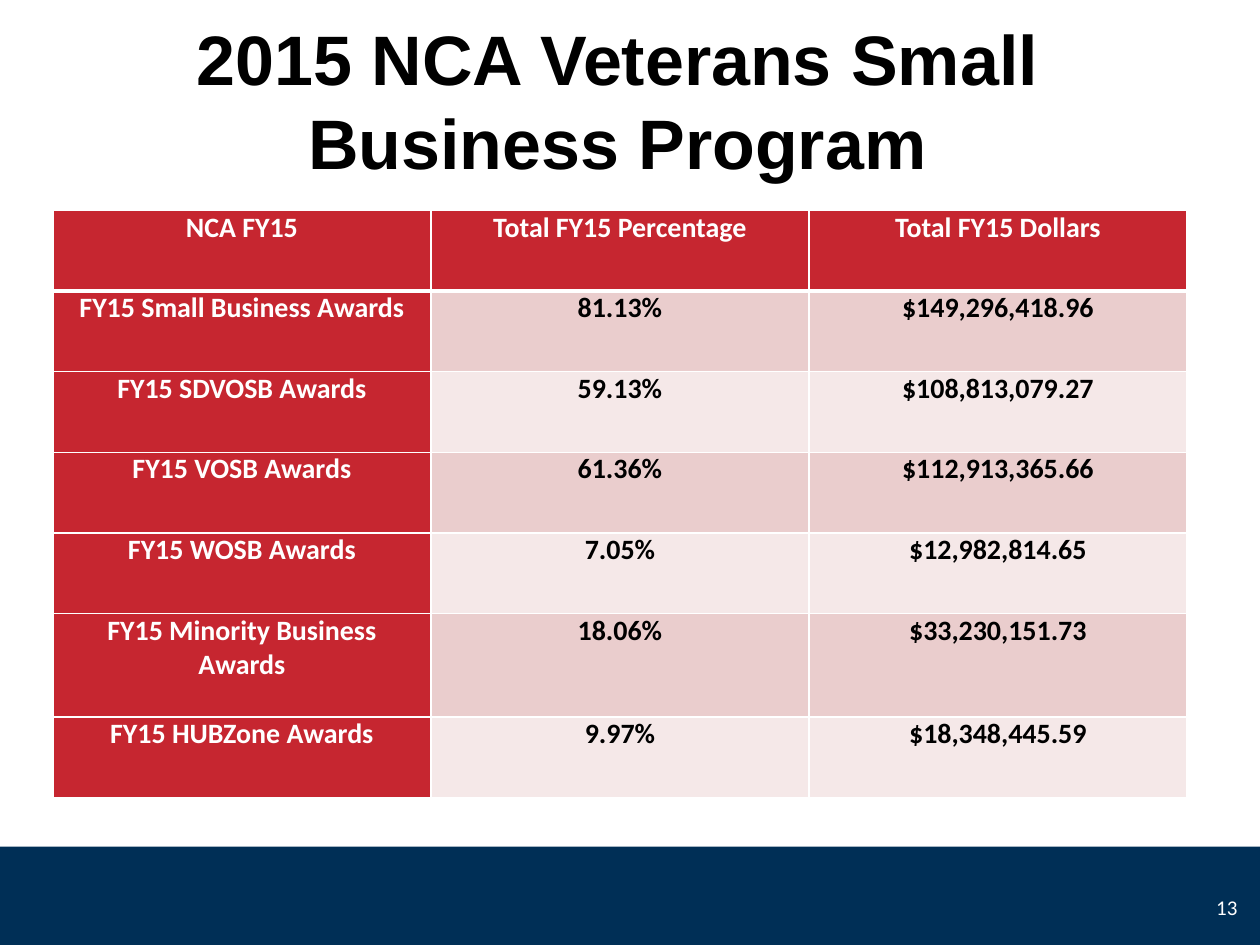
from lxml import etree
from pptx import Presentation
from pptx.dml.color import RGBColor
from pptx.enum.shapes import MSO_SHAPE
from pptx.enum.text import MSO_ANCHOR, PP_ALIGN
from pptx.oxml.ns import qn
from pptx.util import Inches, Pt

COLORS = {"navy": "002F56", "red": "C62630", "rose": "EACDCD",
          "blush": "F5E8E8", "white": "FFFFFF", "black": "000000"}
ROWS = [
    ("NCA FY15", "Total FY15 Percentage", "Total FY15 Dollars"),
    ("FY15 Small Business Awards", "81.13%", "$149,296,418.96"),
    ("FY15 SDVOSB Awards", "59.13%", "$108,813,079.27"),
    ("FY15 VOSB Awards", "61.36%", "$112,913,365.66"),
    ("FY15 WOSB Awards", "7.05%", "$12,982,814.65"),
    ("FY15 Minority Business Awards", "18.06%", "$33,230,151.73"),
    ("FY15 HUBZone Awards", "9.97%", "$18,348,445.59"),
]
ROW_H, TALL_ROW_H, TALL_ROW = 0.64, 0.82, 5
COL_W = 3


def add_text(tf, text, size, font, color, align, bold=False):
    p = tf.paragraphs[0]
    p.alignment = align
    r = p.add_run()
    r.text = text
    r.font.size = Pt(size)
    r.font.name = font
    r.font.bold = bold
    r.font.color.rgb = RGBColor.from_string(COLORS[color])


def add_border(cell, side, width):
    ln = etree.SubElement(cell._tc.get_or_add_tcPr(), qn(f"a:ln{side}"), w=str(Pt(width)))
    fill = etree.SubElement(ln, qn("a:solidFill"))
    etree.SubElement(fill, qn("a:srgbClr"), val=COLORS["white"])


prs = Presentation()
prs.slide_width, prs.slide_height = Inches(10), Inches(7.5)
s = prs.slides.add_slide(prs.slide_layouts[5])

band_top = Inches(6.72)
band = s.shapes.add_shape(MSO_SHAPE.RECTANGLE, 0, band_top,
                          prs.slide_width, prs.slide_height - band_top)
band.shadow.inherit = False
band.fill.solid()
band.fill.fore_color.rgb = RGBColor.from_string(COLORS["navy"])
band.line.fill.background()

title = s.shapes.title
title.left, title.top = Inches(0.33), Inches(0.17)
title.width, title.height = Inches(9.14), Inches(1.24)
title.text_frame.vertical_anchor = MSO_ANCHOR.MIDDLE
add_text(title.text_frame, "2015 NCA Veterans Small Business Program",
         40, "Arial", "black", PP_ALIGN.CENTER, True)

table = s.shapes.add_table(len(ROWS), len(ROWS[0]), Inches(0.42), Inches(1.67),
                           Inches(COL_W * len(ROWS[0])),
                           Inches(ROW_H * (len(ROWS) - 1) + TALL_ROW_H)).table
for col in table.columns:
    col.width = Inches(COL_W)

for i, row in enumerate(ROWS):
    table.rows[i].height = Inches(TALL_ROW_H if i == TALL_ROW else ROW_H)
    for j, text in enumerate(row):
        cell = table.cell(i, j)
        header = i == 0 or j == 0
        cell.margin_left = cell.margin_right = Inches(0.07)
        cell.margin_top = cell.margin_bottom = 0
        for side in "LRTB":
            thick = (i, side) in ((0, "B"), (1, "T"))
            add_border(cell, side, 3 if thick else 1)
        cell.fill.solid()
        shade = "red" if header else "rose" if i % 2 else "blush"
        cell.fill.fore_color.rgb = RGBColor.from_string(COLORS[shade])
        add_text(cell.text_frame, text, 16, "Calibri",
                 "white" if header else "black", PP_ALIGN.CENTER, True)

number = s.shapes.add_textbox(Inches(7.59), Inches(7), Inches(2.33), Inches(0.4))
tf = number.text_frame
tf.word_wrap = True
tf.vertical_anchor = MSO_ANCHOR.MIDDLE
add_text(tf, "13", 12, "Calibri", "white", PP_ALIGN.RIGHT)

prs.save("out.pptx")
